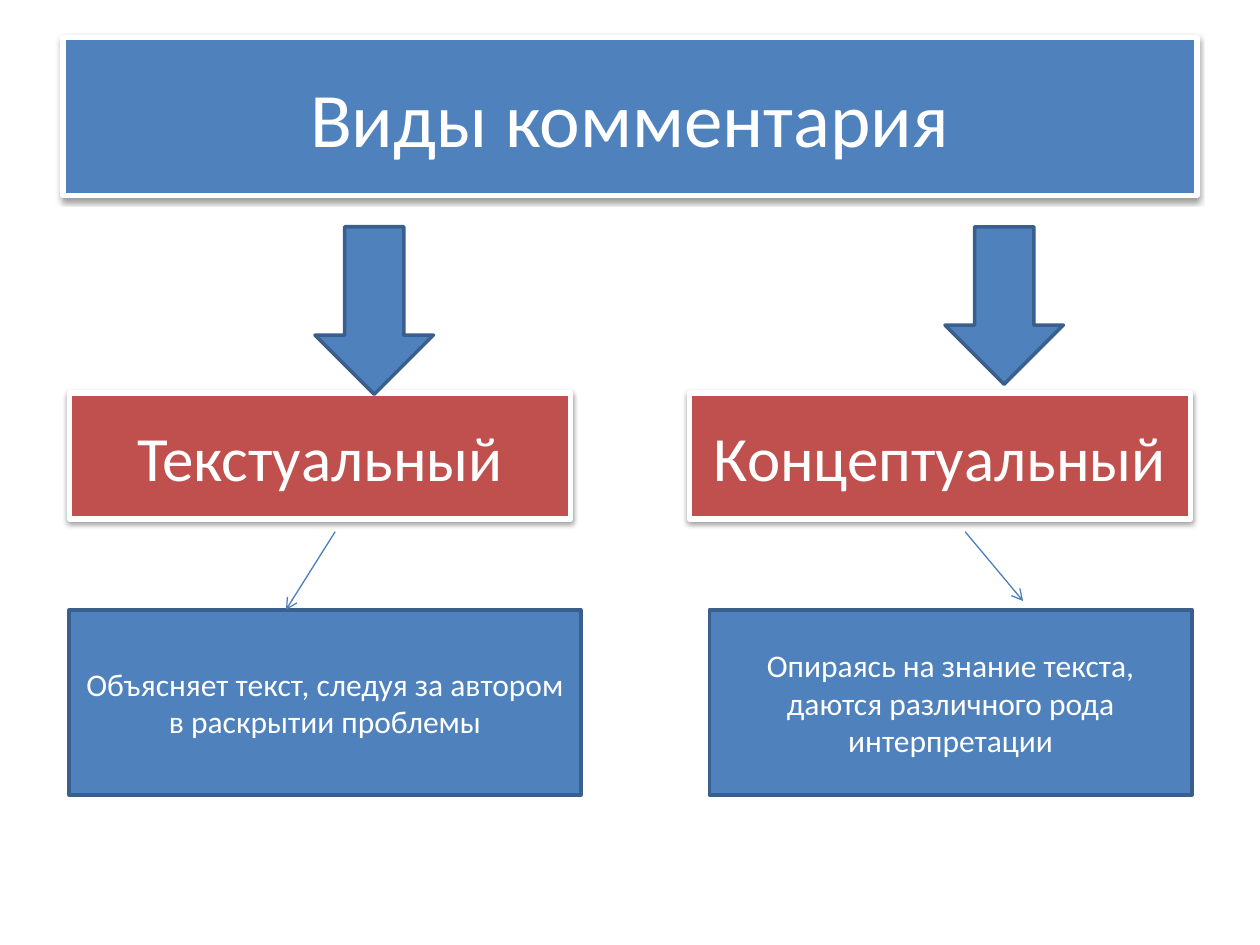
from dataclasses import dataclass

from lxml import etree
from pptx import Presentation
from pptx.dml.color import RGBColor
from pptx.enum.shapes import MSO_CONNECTOR, MSO_SHAPE
from pptx.enum.text import MSO_ANCHOR, PP_ALIGN
from pptx.oxml.ns import qn
from pptx.util import Emu, Pt

RECTANGLE = MSO_SHAPE.RECTANGLE
DOWN_ARROW = MSO_SHAPE.DOWN_ARROW
STRAIGHT = MSO_CONNECTOR.STRAIGHT
CENTER = PP_ALIGN.CENTER
MIDDLE = MSO_ANCHOR.MIDDLE

WHITE = RGBColor(0xFF, 0xFF, 0xFF)
BLUE = RGBColor(0x4F, 0x81, 0xBD)
DARK_BLUE = RGBColor(0x3A, 0x5F, 0x8C)
LINK_BLUE = RGBColor(0x4B, 0x7E, 0xBC)
RED = RGBColor(0xC0, 0x50, 0x4D)

EMU_PER_PX = 9144
FONT = "Calibri"
TITLE_ONLY = 5
KIND_TOP, KIND_WIDTH, KIND_HEIGHT = 312, 398, 100
ARROW_TOP, ARROW_WIDTH = 180, 94
LINK_TOP = 422
DETAIL_TOP, DETAIL_HEIGHT = 484, 147


@dataclass(frozen=True)
class Box:
    left: int
    top: int
    width: int
    height: int


@dataclass(frozen=True)
class Branch:
    kind: str
    kind_left: int
    arrow_left: int
    arrow_height: int
    link_left: int
    link_end: tuple[int, int]
    detail: str
    detail_left: int
    detail_width: int


BRANCHES = (
    Branch("Текстуальный", 55, 250, 133, 266, (227, 484),
           "Объясняет текст, следуя за автором в раскрытии проблемы", 55, 406),
    Branch("Концептуальный", 547, 750, 125, 766, (812, 477),
           "Опираясь на знание текста, даются различного рода интерпретации",
           563, 383),
)


def px(length: int) -> Emu:
    return Emu(length * EMU_PER_PX)


def place(shape, box: Box) -> None:
    shape.left, shape.top = px(box.left), px(box.top)
    shape.width, shape.height = px(box.width), px(box.height)


def paint(shape, fill: RGBColor, outline: RGBColor, weight: float) -> None:
    shape.shadow.inherit = False
    shape.fill.solid()
    shape.fill.fore_color.rgb = fill
    shape.line.color.rgb = outline
    shape.line.width = Pt(weight)


def paint_raised(shape, fill: RGBColor) -> None:
    paint(shape, fill, WHITE, 3)
    effects = shape._element.spPr.find(qn("a:effectLst"))
    shadow = etree.SubElement(
        effects, qn("a:outerShdw"), blurRad=str(Pt(3.1)), dist=str(Pt(1.6)),
        dir="5400000", rotWithShape="0")
    color = etree.SubElement(shadow, qn("a:srgbClr"), val="000000")
    etree.SubElement(color, qn("a:alpha"), val="38000")


def write(shape, text: str, *, size: int, color: RGBColor = WHITE) -> None:
    frame = shape.text_frame
    frame.word_wrap = True
    frame.vertical_anchor = MIDDLE
    paragraph = frame.paragraphs[0]
    paragraph.alignment = CENTER
    run = paragraph.add_run()
    run.text = text
    run.font.name = FONT
    run.font.size = Pt(size)
    run.font.color.rgb = color


def add_block(slide, preset: MSO_SHAPE, box: Box):
    shape = slide.shapes.add_shape(preset, 0, 0, 0, 0)
    place(shape, box)
    return shape


def add_link(slide, start: tuple[int, int], end: tuple[int, int]) -> None:
    link = slide.shapes.add_connector(STRAIGHT, *map(px, start + end))
    link.line.color.rgb = LINK_BLUE
    link.line.width = Pt(0.75)
    etree.SubElement(link.line._get_or_add_ln(), qn("a:tailEnd"), type="arrow")
    etree.SubElement(link._element.spPr, qn("a:effectLst"))


def add_branch(slide, branch: Branch) -> None:
    kind = add_block(slide, RECTANGLE, Box(
        branch.kind_left, KIND_TOP, KIND_WIDTH, KIND_HEIGHT))
    paint_raised(kind, RED)
    write(kind, branch.kind, size=36)

    arrow = add_block(slide, DOWN_ARROW, Box(
        branch.arrow_left, ARROW_TOP, ARROW_WIDTH, branch.arrow_height))
    paint(arrow, BLUE, DARK_BLUE, 2)

    detail = add_block(slide, RECTANGLE, Box(
        branch.detail_left, DETAIL_TOP, branch.detail_width, DETAIL_HEIGHT))
    paint(detail, BLUE, DARK_BLUE, 2)
    write(detail, branch.detail, size=18)

    add_link(slide, (branch.link_left, LINK_TOP), branch.link_end)


def main() -> None:
    deck = Presentation()
    deck.slide_width, deck.slide_height = px(1000), px(750)
    slide = deck.slides.add_slide(deck.slide_layouts[TITLE_ONLY])

    title = slide.shapes.title
    place(title, Box(50, 30, 900, 125))
    paint_raised(title, BLUE)
    write(title, "Виды комментария", size=44)

    for branch in BRANCHES:
        add_branch(slide, branch)

    deck.save("out.pptx")


if __name__ == "__main__":
    main()
